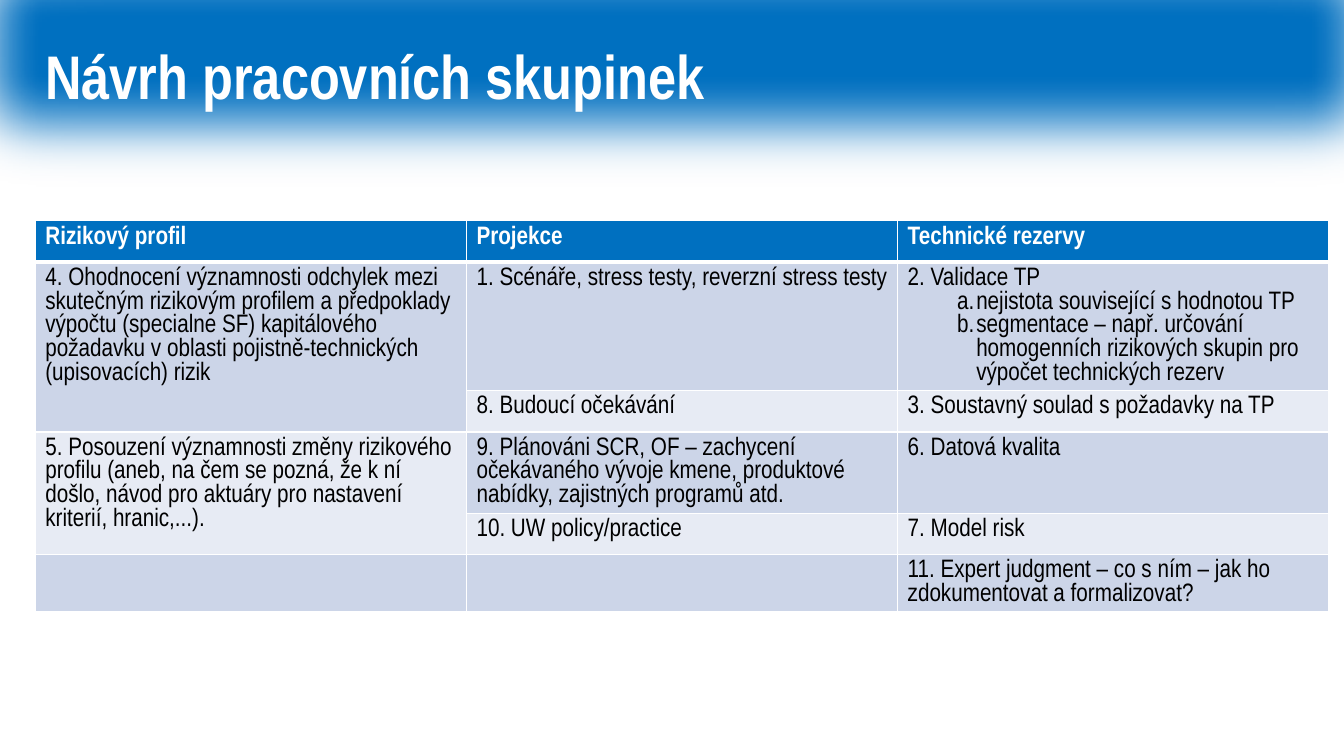
import pptx
import pptx.dml.color
import pptx.enum.shapes
import pptx.enum.text
import pptx.oxml.ns
import pptx.util
from lxml import etree
from pptx.util import Inches

RGBColor = pptx.dml.color.RGBColor
BLUE = RGBColor(0x00, 0x70, 0xC0)
WHITE = RGBColor(0xFF, 0xFF, 0xFF)
BLACK = RGBColor(0x00, 0x00, 0x00)
DARK_BAND = RGBColor(0xCC, 0xD5, 0xE8)
LIGHT_BAND = RGBColor(0xE7, 0xEB, 0xF4)

HEADERS = ["Rizikový profil", "Projekce", "Technické rezervy"]
# Each cell lists its paragraphs; those after the first are lettered items
BODY = [
    [["4. Ohodnocení významnosti odchylek mezi skutečným rizikovým profilem a předpoklady "
      "výpočtu (specialne SF) kapitálového požadavku v oblasti pojistně-technických "
      "(upisovacích) rizik"],
     ["1. Scénáře, stress testy, reverzní stress testy"],
     ["2. Validace TP", "nejistota související s hodnotou TP",
      "segmentace – např. určování homogenních rizikových skupin pro výpočet "
      "technických rezerv"]],
    [[], ["8. Budoucí očekávání"], ["3. Soustavný soulad s požadavky na TP"]],
    [["5. Posouzení významnosti změny rizikového profilu (aneb, na čem se pozná, že k ní "
      "došlo, návod pro aktuáry pro nastavení kriterií, hranic,...)."],
     ["9. Plánováni SCR, OF – zachycení očekávaného vývoje kmene, produktové nabídky, "
      "zajistných programů atd."],
     ["6. Datová kvalita"]],
    [[], ["10. UW policy/practice"], ["7. Model risk"]],
    [[], [], ["11. Expert judgment – co s ním – jak ho zdokumentovat a formalizovat?"]],
]
MERGED_ROWS = [(1, 2), (3, 4)]


def add_xml(parent, tag, **attributes):
    return etree.SubElement(parent, pptx.oxml.ns.qn(tag), attributes)


def write_text(text_frame, paragraphs, *, size, color, bold=False, font="Arial Narrow",
               line_spacing=None):
    for index, text in enumerate(paragraphs):
        paragraph = text_frame.paragraphs[0] if index == 0 else text_frame.add_paragraph()
        paragraph.alignment = pptx.enum.text.PP_ALIGN.LEFT
        if line_spacing:
            paragraph.line_spacing = line_spacing
        if index > 0:
            paragraph.level = 1
            properties = paragraph._p.get_or_add_pPr()
            properties.set("marL", str(Inches(0.68)))
            properties.set("indent", str(Inches(-0.19)))
            add_xml(properties, "a:buFont", typeface="+mj-lt")
            add_xml(properties, "a:buAutoNum", type="alphaLcPeriod")
        run = paragraph.add_run()
        run.text = text
        run.font.name = font
        run.font.size = pptx.util.Pt(size)
        run.font.bold = bold
        run.font.color.rgb = color


class SlideBuilder:
    def __init__(self, presentation):
        self.slide = presentation.slides.add_slide(presentation.slide_layouts[5])
        self.title_size = 44
        self.table_size = 18

    def add_title(self, text, left, top, width, height):
        title = self.slide.shapes.title
        title.left, title.top = Inches(left), Inches(top)
        title.width, title.height = Inches(width), Inches(height)
        title.text_frame.vertical_anchor = pptx.enum.text.MSO_ANCHOR.MIDDLE
        write_text(title.text_frame, [text], size=self.title_size, color=WHITE, bold=True,
                   line_spacing=0.9)

    def add_soft_band(self, left, top, width, height):
        band = self.slide.shapes.add_shape(
            pptx.enum.shapes.MSO_SHAPE.RECTANGLE,
            Inches(left), Inches(top), Inches(width), Inches(height))
        band.fill.solid()
        band.fill.fore_color.rgb = BLUE
        band.line.fill.background()
        band.shadow.inherit = False
        effects = band.element.spPr.find(pptx.oxml.ns.qn("a:effectLst"))
        add_xml(effects, "a:softEdge", rad=str(pptx.util.Pt(50)))
        # The band lies behind the title
        self.slide.shapes.title.element.addprevious(band.element)

    def style_cell(self, cell, fill, top=1, bottom=1):
        properties = cell._tc.get_or_add_tcPr()
        for side, width in (("L", 1), ("R", 1), ("T", top), ("B", bottom)):
            border = add_xml(properties, f"a:ln{side}", w=str(pptx.util.Pt(width)))
            add_xml(add_xml(border, "a:solidFill"), "a:srgbClr", val=str(WHITE))
        cell.fill.solid()
        cell.fill.fore_color.rgb = fill

    def add_table(self, left, top, width, row_height):
        row_count = len(BODY) + 1
        table = self.slide.shapes.add_table(
            row_count, len(HEADERS), Inches(left), Inches(top), Inches(width),
            Inches(row_height * row_count)).table
        for row in table.rows:
            row.height = Inches(row_height)

        # Header row
        for column, header in enumerate(HEADERS):
            cell = table.cell(0, column)
            self.style_cell(cell, BLUE, bottom=3)
            write_text(cell.text_frame, [header], size=self.table_size, color=WHITE, bold=True)

        # Body rows: bands alternate by row, and by merged pair in the first column
        for row, contents in enumerate(BODY, start=1):
            for column, paragraphs in enumerate(contents):
                band = (row - 1) // 2 if column == 0 else row - 1
                cell = table.cell(row, column)
                self.style_cell(cell, LIGHT_BAND if band % 2 else DARK_BAND,
                                top=3 if row == 1 else 1)
                write_text(cell.text_frame, paragraphs, size=self.table_size, color=BLACK)
        for first, last in MERGED_ROWS:
            table.cell(first, 0).merge(table.cell(last, 0))


def main():
    presentation = pptx.Presentation()
    presentation.slide_width = Inches(13.33)
    presentation.slide_height = Inches(7.5)

    builder = SlideBuilder(presentation)
    builder.add_soft_band(-0.92, -1.15, 15.24, 3.22)
    builder.add_title("Návrh pracovních skupinek", 0.35, 0.17, 11.03, 1.24)
    builder.add_table(0.35, 2.19, 12.83, 0.41)
    presentation.save("out.pptx")


if __name__ == "__main__":
    main()
